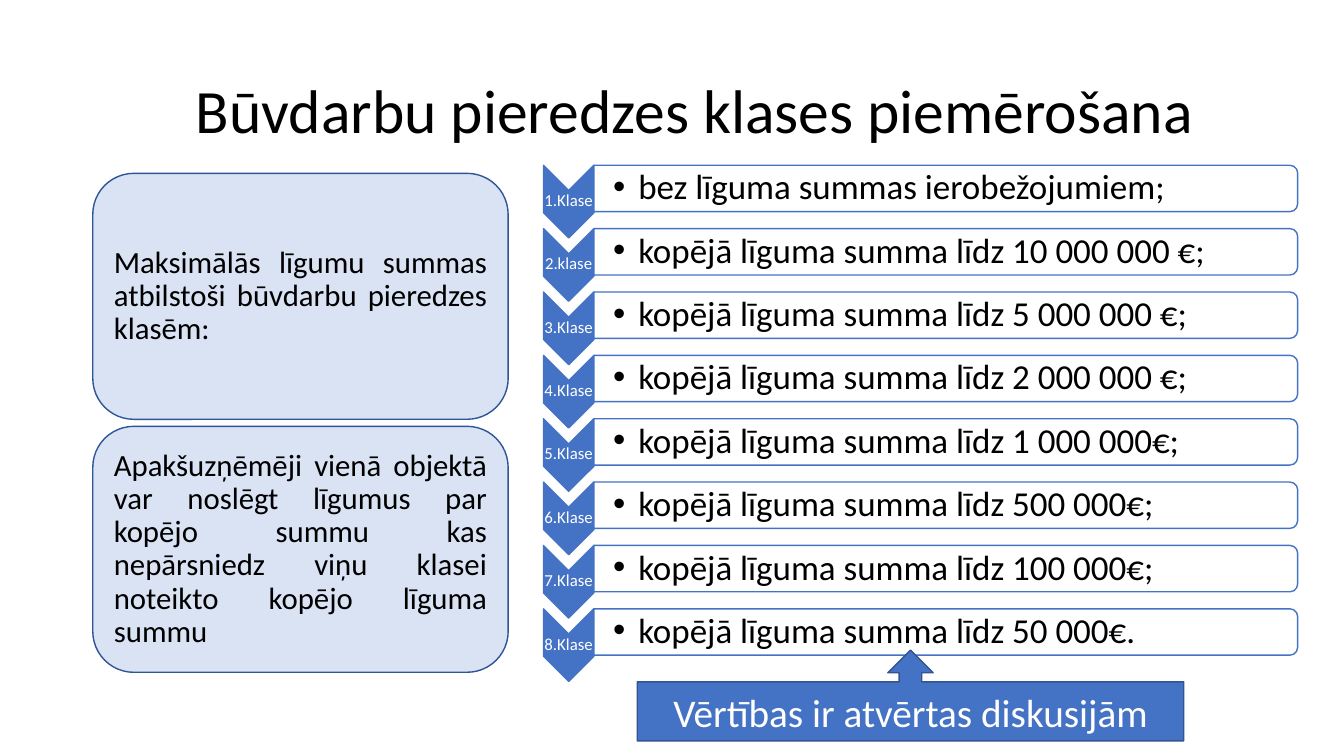
from dataclasses import dataclass
from lxml.etree import SubElement
from pptx import Presentation
from pptx.dml.color import RGBColor
from pptx.enum.shapes import MSO_SHAPE as Shape
from pptx.enum.text import MSO_ANCHOR as Anchor, PP_ALIGN as Align
from pptx.oxml.ns import qn
from pptx.util import Inches, Pt

TITLE = "Būvdarbu pieredzes klases piemērošana"
NOTES = [
    "Maksimālās līgumu summas atbilstoši būvdarbu pieredzes klasēm:",
    "Apakšuzņēmēji vienā objektā var noslēgt līgumus par kopējo summu kas "
    "nepārsniedz viņu klasei noteikto kopējo līguma summu",
]
CLASSES = [
    ("1.Klase", "bez līguma summas ierobežojumiem;"),
    ("2.klase", "kopējā līguma summa līdz 10 000 000 €;"),
    ("3.Klase", "kopējā līguma summa līdz 5 000 000 €;"),
    ("4.Klase", "kopējā līguma summa līdz 2 000 000 €;"),
    ("5.Klase", "kopējā līguma summa līdz 1 000 000€;"),
    ("6.Klase", "kopējā līguma summa līdz 500 000€;"),
    ("7.Klase", "kopējā līguma summa līdz 100 000€;"),
    ("8.Klase", "kopējā līguma summa līdz 50 000€."),
]
CALLOUT = "Vērtības ir atvērtas diskusijām"


@dataclass(frozen=True)
class Theme:
    font: str = "Calibri"
    dark: str = "000000"
    light: str = "FFFFFF"
    accent: str = "4472C4"
    pale: str = "DAE3F3"
    note_line: str = "2F5597"
    callout_line: str = "325491"
    title_size: int = 44
    callout_size: int = 28
    limit_size: int = 25
    note_size: int = 22
    class_size: int = 12


theme = Theme()


def write(frame, text, size, color, align, insets=(0.1, 0.05, 0.1, 0.05),
          spacing=0.9, wrap=True, bullet=False):
    frame.text = text
    frame.word_wrap = wrap
    frame.vertical_anchor = Anchor.MIDDLE
    frame.margin_left, frame.margin_top, frame.margin_right, frame.margin_bottom = map(Inches, insets)
    paragraph = frame.paragraphs[0]
    paragraph.alignment = align
    paragraph.line_spacing = spacing
    if bullet:
        properties = paragraph._p.get_or_add_pPr()
        properties.set("marL", str(Inches(0.25)))
        properties.set("indent", str(-Inches(0.25)))
        SubElement(properties, qn("a:buFont"), typeface="Arial")
        SubElement(properties, qn("a:buChar"), char="•")
    font = paragraph.runs[0].font
    font.name = theme.font
    font.size = Pt(size)
    font.color.rgb = RGBColor.from_string(color)


def draw(slide, kind, box, fill, line):
    shape = slide.shapes.add_shape(kind, *map(Inches, box))
    shape.shadow.inherit = False
    shape.fill.solid()
    shape.fill.fore_color.rgb = RGBColor.from_string(fill)
    shape.line.color.rgb = RGBColor.from_string(line)
    shape.line.width = Pt(1)
    return shape


def draw_turned(slide, kind, left, top, width, height, fill):
    box = (left + (width - height) / 2, top + (height - width) / 2, height, width)
    draw(slide, kind, box, fill, theme.accent).rotation = 90


def add_class(slide, top, label, limit):
    chevron_left, chevron_width, chevron_height = 5.39, 0.5, 0.72
    bar_left, bar_width, bar_height = 5.89, 6.98, 0.46
    draw_turned(slide, Shape.CHEVRON, chevron_left, top, chevron_width, chevron_height, theme.accent)
    label_box = slide.shapes.add_textbox(
        Inches(chevron_left), Inches(top + chevron_width / 2), Inches(chevron_width), Inches(0.21))
    write(label_box.text_frame, label, theme.class_size, theme.light, Align.CENTER,
          (0.01,) * 4, wrap=False)
    draw_turned(slide, Shape.ROUND_2_SAME_RECTANGLE, bar_left, top, bar_width, bar_height, theme.light)
    limit_box = slide.shapes.add_textbox(
        Inches(bar_left), Inches(top + 0.02), Inches(bar_width), Inches(bar_height - 0.04))
    write(limit_box.text_frame, limit, theme.limit_size, theme.dark, Align.LEFT,
          (0.19, 0.02, 0.02, 0.02), bullet=True)


def main():
    deck = Presentation()
    deck.slide_width, deck.slide_height = Inches(13.33), Inches(7.5)
    slide = deck.slides.add_slide(deck.slide_layouts[5])

    title = slide.shapes.title
    title.left, title.top, title.width, title.height = map(Inches, (0.92, 0.4, 11.95, 1.45))
    write(title.text_frame, TITLE, theme.title_size, theme.dark, Align.CENTER)

    classes_top, class_pitch = 1.64, 4.4 / 7
    for row, (label, limit) in enumerate(CLASSES):
        add_class(slide, classes_top + row * class_pitch, label, limit)

    notes_top, note_height, note_gap = 1.72, 2.44, 0.07
    for row, text in enumerate(NOTES):
        box = (0.92, notes_top + row * (note_height + note_gap), 4.12, note_height)
        note = draw(slide, Shape.ROUNDED_RECTANGLE, box, theme.pale, theme.note_line)
        write(note.text_frame, text, theme.note_size, theme.dark, Align.JUSTIFY, (0.09,) * 4)

    callout = draw(slide, Shape.UP_ARROW_CALLOUT, (6.32, 6.45, 5.42, 0.9),
                   theme.accent, theme.callout_line)
    write(callout.text_frame, CALLOUT, theme.callout_size, theme.light, Align.CENTER, spacing=1.0)

    deck.save("out.pptx")


if __name__ == "__main__":
    main()
